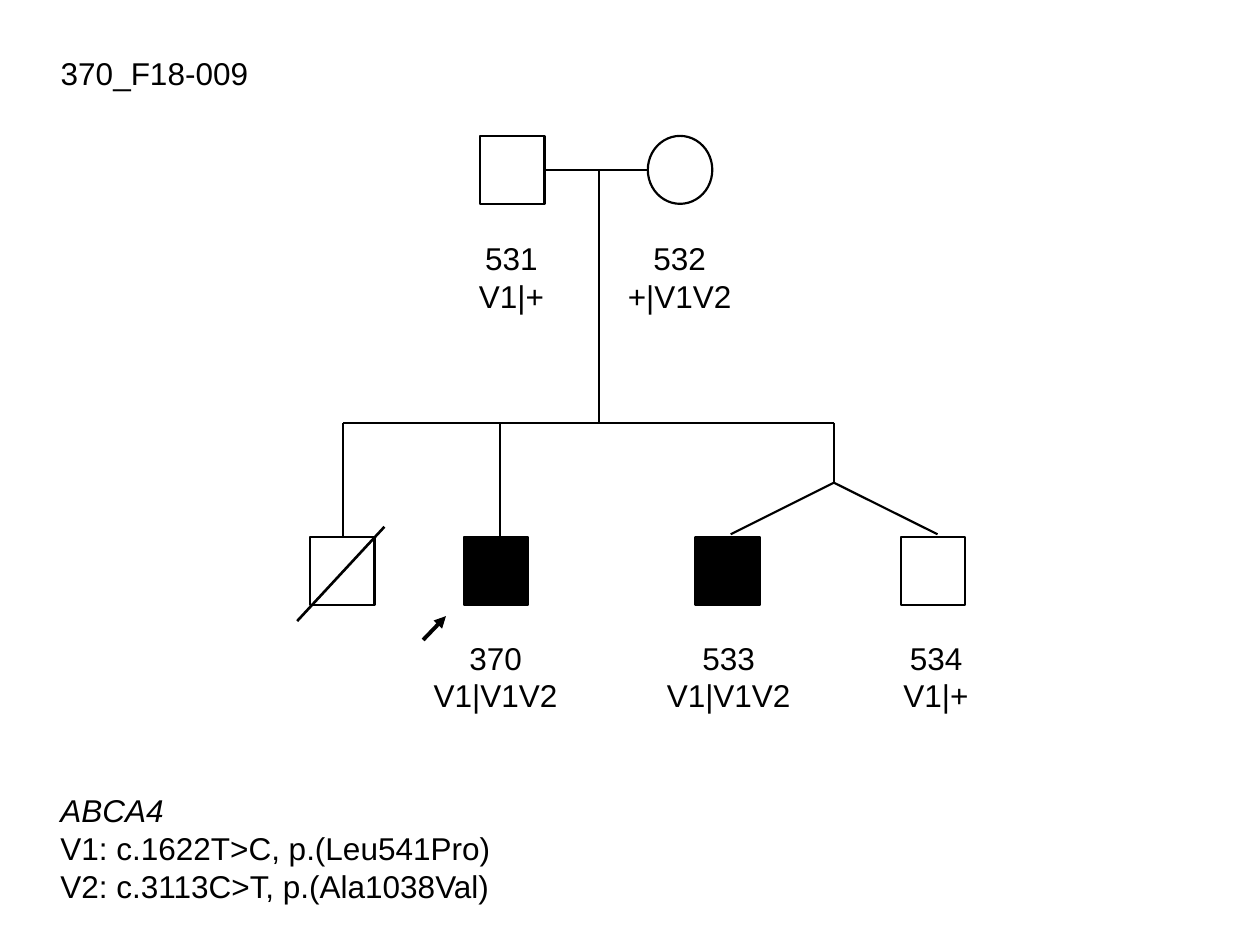
from pptx import Presentation
from pptx.dml.color import RGBColor
from pptx.enum.shapes import MSO_CONNECTOR as Connector, MSO_SHAPE as Shape
from pptx.enum.text import MSO_ANCHOR as Anchor, MSO_AUTO_SIZE as AutoSize, PP_ALIGN as Align
from pptx.oxml.ns import qn
from pptx.util import Cm, Pt
from lxml.etree import SubElement

BLACK = "000000"
WHITE = "FFFFFF"
SYMBOL_WIDTH, SYMBOL_HEIGHT = 1.3, 1.37
PARENT_TOP, CHILD_TOP = 2.74, 10.82
PARENT_LABEL_TOP, CHILD_LABEL_TOP = 4.7, 12.75
MARRIAGE_Y, SIBSHIP_Y, TWIN_Y = 3.43, 8.52, 9.73
DESCENT_X, FIRST_X, PROBAND_X, TWIN_X = 12.07, 6.91, 10.08, 16.81


def color(value):
    return RGBColor.from_string(value)


def place(box, left, top, width, height):
    box.left, box.top, box.width, box.height = Cm(left), Cm(top), Cm(width), Cm(height)


def write(box, text, align=Align.LEFT, wrap=False):
    frame = box.text_frame
    frame.text = text
    frame.word_wrap = wrap
    frame.auto_size = AutoSize.SHAPE_TO_FIT_TEXT
    frame.vertical_anchor = Anchor.TOP
    for paragraph in frame.paragraphs:
        paragraph.alignment = align
        paragraph.line_spacing = 1.0
        paragraph.space_before = Pt(0)
        for run in paragraph.runs:
            run.font.name = "Arial"
            run.font.size = Pt(18)
            run.font.color.rgb = color(BLACK)
    return frame


def add_title(slide, text):
    title = slide.shapes.title
    place(title, 0.97, 0.97, 4.32, 1.02)
    write(title, text)


def add_label(slide, center, top, width, text):
    label = slide.shapes.add_textbox(Cm(center - width / 2), Cm(top), Cm(width), Cm(1.8))
    write(label, text, Align.CENTER)


def add_symbol(slide, left, top, kind=Shape.RECTANGLE, fill=None):
    symbol = slide.shapes.add_shape(kind, Cm(left), Cm(top), Cm(SYMBOL_WIDTH), Cm(SYMBOL_HEIGHT))
    symbol.shadow.inherit = False
    if fill:
        symbol.fill.solid()
        symbol.fill.fore_color.rgb = color(fill)
    else:
        symbol.fill.background()
    symbol.line.color.rgb = color(BLACK)
    symbol.line.width = Pt(1.25)


def add_line(slide, start, end, weight=1.25, arrow=False):
    line = slide.shapes.add_connector(Connector.STRAIGHT, *map(Cm, start + end))
    line.line.color.rgb = color(BLACK)
    line.line.width = Pt(weight)
    if arrow:
        SubElement(line.line._get_or_add_ln(), qn("a:tailEnd"), type="triangle")
    SubElement(line._element.spPr, qn("a:effectLst"))


def add_variants(slide):
    variants = slide.shapes.add_textbox(Cm(0.97), Cm(15.82), Cm(24.13), Cm(2.57))
    frame = write(
        variants,
        "ABCA4\nV1: c.1622T>C, p.(Leu541Pro)\nV2: c.3113C>T, p.(Ala1038Val)",
        wrap=True,
    )
    frame.paragraphs[0].runs[0].font.italic = True


def add_family_lines(slide):
    for start, end in (
        ((DESCENT_X, MARRIAGE_Y), (DESCENT_X, SIBSHIP_Y)),
        ((FIRST_X, SIBSHIP_Y), (TWIN_X, SIBSHIP_Y)),
        ((FIRST_X, SIBSHIP_Y), (FIRST_X, CHILD_TOP)),
        ((PROBAND_X, SIBSHIP_Y), (PROBAND_X, CHILD_TOP)),
        ((TWIN_X, SIBSHIP_Y), (TWIN_X, TWIN_Y)),
        ((TWIN_X, TWIN_Y), (14.73, 10.77)),
        ((TWIN_X, TWIN_Y), (18.9, 10.77)),
    ):
        add_line(slide, start, end)
    add_line(slide, (13.06, MARRIAGE_Y), (11, MARRIAGE_Y), 1.5)


def main():
    deck = Presentation()
    deck.slide_width, deck.slide_height = Cm(25.4), Cm(19.05)
    slide = deck.slides.add_slide(deck.slide_layouts[5])

    add_title(slide, "370_F18-009")
    add_family_lines(slide)

    add_symbol(slide, 9.68, PARENT_TOP)
    add_symbol(slide, 13.06, PARENT_TOP, Shape.OVAL, WHITE)
    for left, fill in ((6.25, None), (9.35, BLACK), (14.02, BLACK), (18.16, None)):
        add_symbol(slide, left, CHILD_TOP, fill=fill)

    add_line(slide, (5.99, 12.52), (7.75, 10.62), 1.5)
    add_line(slide, (8.53, 12.9), (8.99, 12.42), 2.25, arrow=True)

    for center, top, width, text in (
        (10.31, PARENT_LABEL_TOP, 1.83, "531\nV1|+"),
        (13.7, PARENT_LABEL_TOP, 2.62, "532\n+|V1V2"),
        (9.99, CHILD_LABEL_TOP, 3.02, "370\nV1|V1V2"),
        (14.69, CHILD_LABEL_TOP, 3.02, "533\nV1|V1V2"),
        (18.87, CHILD_LABEL_TOP, 1.83, "534\nV1|+"),
    ):
        add_label(slide, center, top, width, text)

    add_variants(slide)
    deck.save("out.pptx")


if __name__ == "__main__":
    main()
